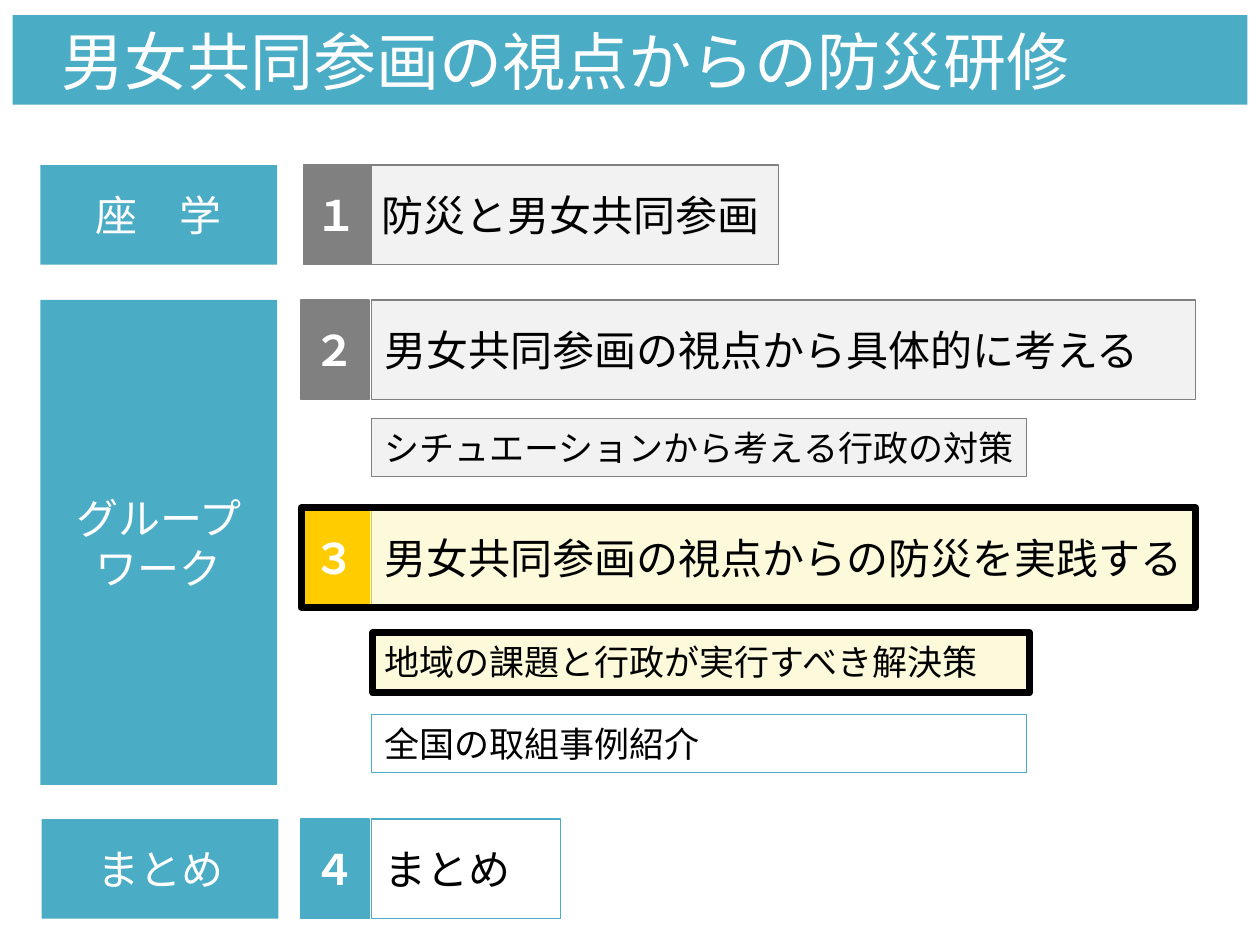
from dataclasses import dataclass
from typing import Optional

import pptx
import pptx.dml.color
import pptx.enum.shapes
import pptx.enum.text
import pptx.util

Inches = pptx.util.Inches
Pt = pptx.util.Pt
Align = pptx.enum.text.PP_ALIGN


@dataclass(frozen=True)
class Theme:
    teal: str = "4BACC6"
    grey: str = "808080"
    pale_grey: str = "F2F2F2"
    yellow: str = "FFCC00"
    pale_yellow: str = "FDF9DB"
    black: str = "000000"
    white: str = "FFFFFF"
    title_font: str = "Arial"
    body_font: str = "Calibri"
    title_size: int = 36
    item_size: int = 24
    detail_size: int = 20
    thin: float = 0.75
    thick: float = 4


THEME = Theme()
ROW_H = 0.79
DETAIL_H = 0.46
NUMBER_W = 0.54
ITEM_X = 2.95
DETAIL_W = 5.2


@dataclass(frozen=True)
class Box:
    x: float
    y: float
    w: float
    h: float
    text: str = ""
    fill: Optional[str] = None
    line: Optional[str] = None
    line_w: float = THEME.thin
    color: str = THEME.black
    size: int = THEME.item_size
    bold: bool = False
    align: Align = Align.LEFT
    wrap: bool = True


def section(x: float, y: float, h: float, text: str) -> Box:
    return Box(x, y, 1.88, h, text, THEME.teal, color=THEME.white,
               align=Align.CENTER, wrap=False)


def number(x: float, y: float, text: str, fill: str) -> Box:
    return Box(x, y, NUMBER_W, ROW_H, text, fill, fill, color=THEME.white,
               bold=True, wrap=False)


def item(x: float, y: float, w: float, text: str, fill: Optional[str], line: str) -> Box:
    return Box(x, y, w, ROW_H, text, fill, line)


def detail(y: float, text: str, fill: Optional[str], line: str) -> Box:
    return Box(ITEM_X, y, DETAIL_W, DETAIL_H, text, fill, line, size=THEME.detail_size)


def highlight(x: float, y: float, w: float, h: float) -> Box:
    return Box(x, y, w, h, line=THEME.black, line_w=THEME.thick)


BOXES = [
    section(0.32, 1.31, ROW_H, "座　学"),
    item(2.93, 1.31, 3.25, "防災と男女共同参画", THEME.pale_grey, THEME.grey),
    number(2.41, 1.31, "１", THEME.grey),
    section(0.32, 2.38, 3.85, "グループ\nワーク"),
    item(ITEM_X, 2.38, 6.54, "男女共同参画の視点から具体的に考える", THEME.pale_grey, THEME.grey),
    number(2.39, 2.38, "２", THEME.grey),
    detail(3.32, "シチュエーションから考える行政の対策", THEME.pale_grey, THEME.grey),
    item(ITEM_X, 4.03, 6.54, "男女共同参画の視点からの防災を実践する", THEME.pale_yellow, THEME.yellow),
    number(2.39, 4.03, "３", THEME.yellow),
    detail(5.02, "地域の課題と行政が実行すべき解決策", THEME.pale_yellow, THEME.teal),
    detail(5.67, "全国の取組事例紹介", None, THEME.teal),
    section(0.33, 6.5, ROW_H, "まとめ"),
    item(ITEM_X, 6.5, 1.5, "まとめ", None, THEME.teal),
    number(2.39, 6.5, "４", THEME.teal),
    highlight(2.39, 4.03, 7.1, ROW_H),
    highlight(2.96, 5.02, 5.21, 0.48),
]


def rgb(color: str) -> pptx.dml.color.RGBColor:
    return pptx.dml.color.RGBColor.from_string(color)


def set_text(tf, text: str, font: str, size: int, color: str,
             bold: bool = False, align: Align = Align.LEFT) -> None:
    tf.text = text
    tf.vertical_anchor = pptx.enum.text.MSO_ANCHOR.MIDDLE
    for p in tf.paragraphs:
        p.alignment = align
        for r in p.runs:
            r.font.name = font
            r.font.size = Pt(size)
            r.font.bold = bold
            r.font.color.rgb = rgb(color)


def draw_box(s, box: Box) -> None:
    sp = s.shapes.add_shape(pptx.enum.shapes.MSO_SHAPE.RECTANGLE, Inches(box.x),
                            Inches(box.y), Inches(box.w), Inches(box.h))
    sp.shadow.inherit = False
    if box.fill:
        sp.fill.solid()
        sp.fill.fore_color.rgb = rgb(box.fill)
    else:
        sp.fill.background()
    if box.line:
        sp.line.color.rgb = rgb(box.line)
        sp.line.width = Pt(box.line_w)
    else:
        sp.line.fill.background()
    if box.text:
        set_text(sp.text_frame, box.text, THEME.body_font, box.size, box.color,
                 box.bold, box.align)
        sp.text_frame.word_wrap = box.wrap


def draw_title(s, text: str) -> None:
    sp = s.shapes.title
    sp.left, sp.top = Inches(0.1), Inches(0.12)
    sp.width, sp.height = Inches(9.8), Inches(0.71)
    sp.fill.solid()
    sp.fill.fore_color.rgb = rgb(THEME.teal)
    tf = sp.text_frame
    set_text(tf, text, THEME.title_font, THEME.title_size, THEME.white)
    tf.auto_size = pptx.enum.text.MSO_AUTO_SIZE.NONE
    tf.margin_left = Inches(0.39)


def main() -> None:
    prs = pptx.Presentation()
    prs.slide_width, prs.slide_height = Inches(10), Inches(7.5)
    s = prs.slides.add_slide(prs.slide_layouts[5])
    draw_title(s, "男女共同参画の視点からの防災研修")
    for box in BOXES:
        draw_box(s, box)
    prs.save("out.pptx")


if __name__ == "__main__":
    main()
